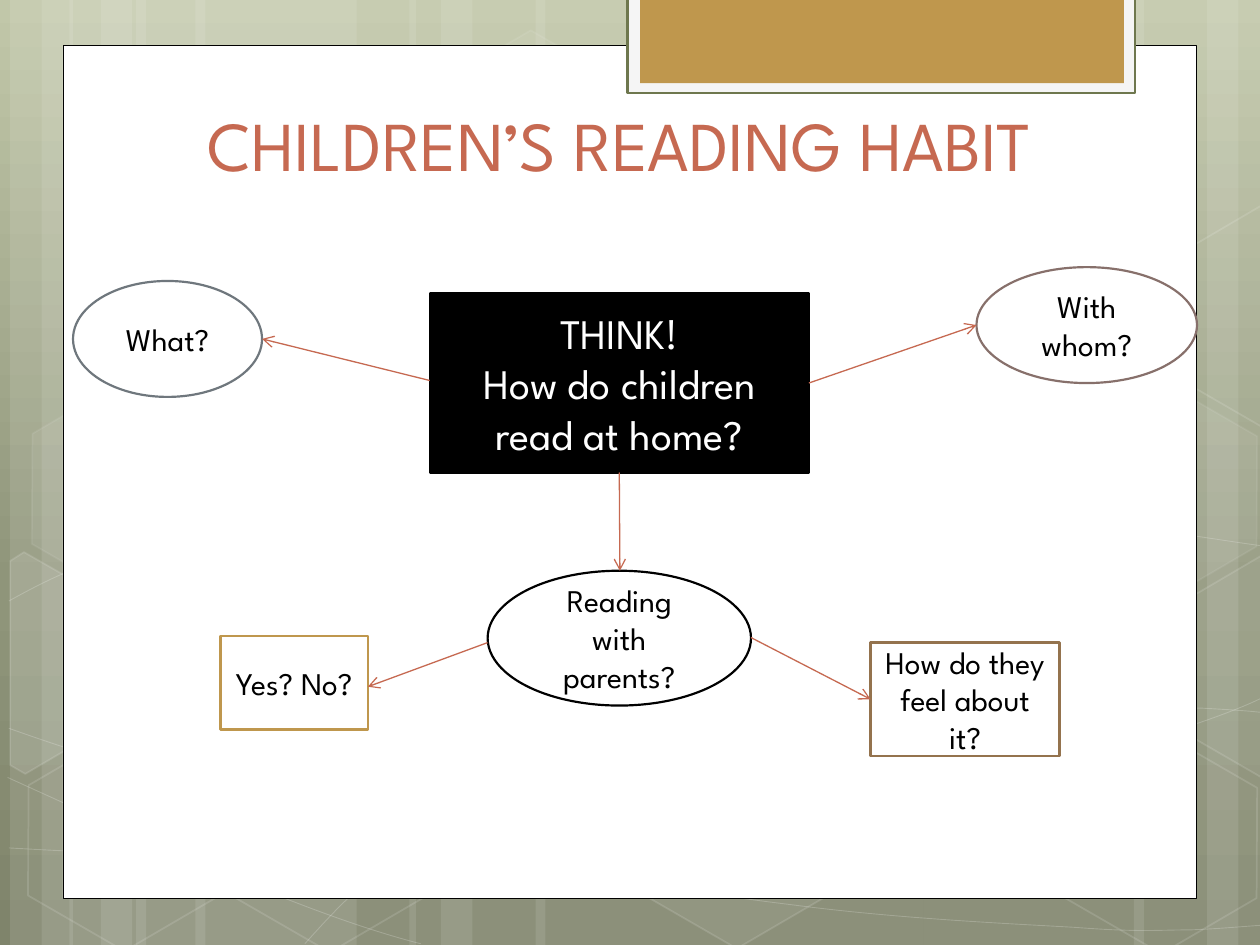
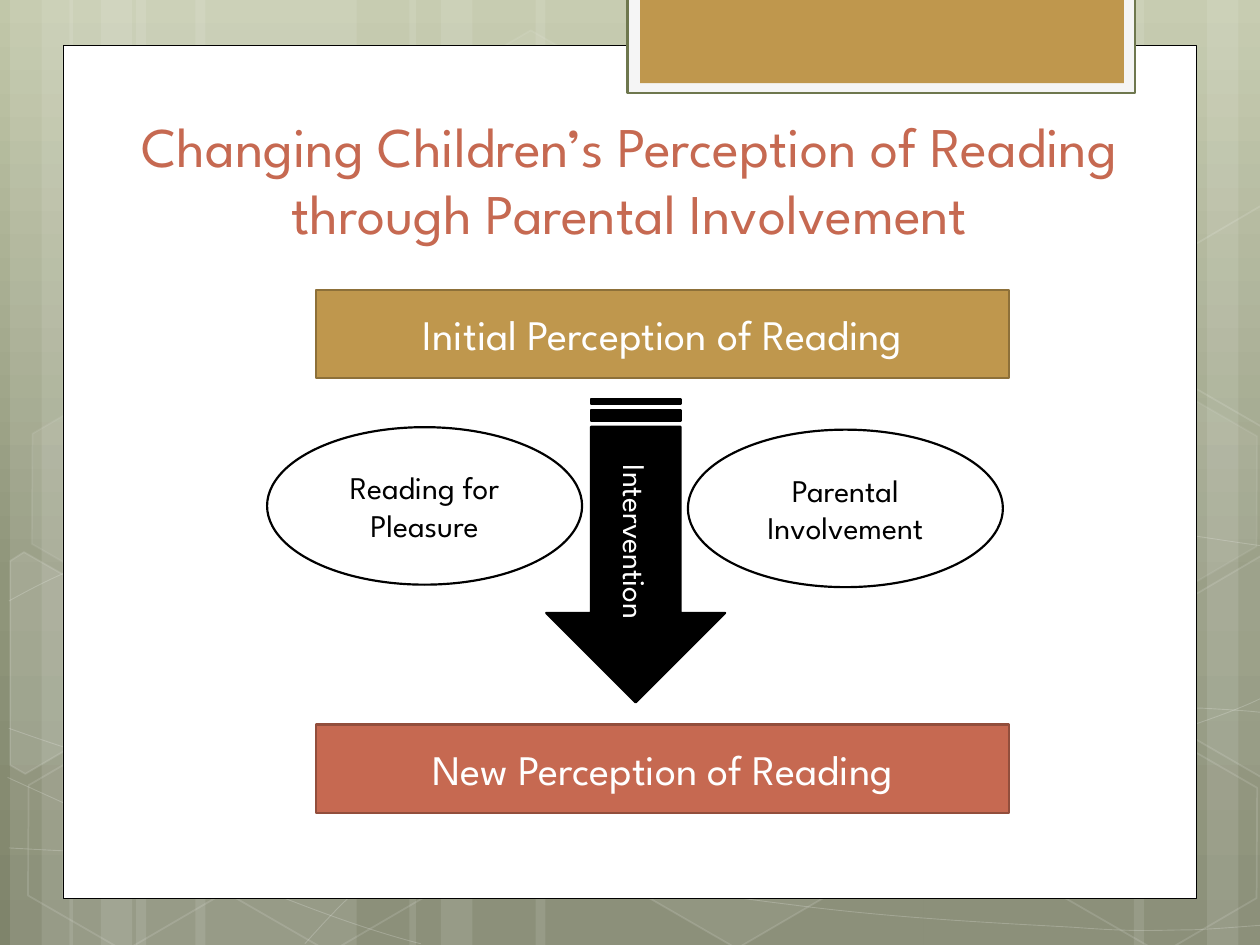
from copy import deepcopy
from math import cos, radians, sin

from lxml import etree
from pptx import Presentation
from pptx.dml.color import RGBColor
from pptx.enum.shapes import MSO_CONNECTOR, MSO_SHAPE
from pptx.enum.text import MSO_ANCHOR, PP_ALIGN
from pptx.oxml.ns import qn
from pptx.util import Inches, Pt

RECT, OVAL, HEXAGON = MSO_SHAPE.RECTANGLE, MSO_SHAPE.OVAL, MSO_SHAPE.HEXAGON
STRIPED_ARROW = MSO_SHAPE.STRIPED_RIGHT_ARROW
STRAIGHT, CENTER, BOTTOM = MSO_CONNECTOR.STRAIGHT, PP_ALIGN.CENTER, MSO_ANCHOR.BOTTOM
LEFT_SIDE, BOTTOM_SIDE, RIGHT_SIDE = 1, 2, 3

WIDTH, HEIGHT = 10, 7.5
FONT = "League Spartan"
WHITE, BLACK, RED, GOLD = "FFFFFF", "000000", "C66951", "BF974D"
BACKGROUND = [(0, "C1C7A9"), (0.62, "8F957A"), (1, "7F846B")]
TILT = 30  # degrees, for every hexagon

# Backdrop: left edge and width of each pale stripe
STRIPES = [(1.08, 1.75), (0.08, 0.5), (0.33, 0.83), (1.55, 1.75), (0.55, 0.5), (0.8, 0.83),
           (7.33, 1.75), (9.58, 0.5), (9, 0.83), (4.25, 3.08), (3.25, 0.5), (3.5, 0.83)]
# Each curve: a start, then two control points and an end per Bezier segment
CURVES = [
    [(0.07, 6.73), (0.61, 6.76), (1.15, 6.79), (1.9, 6.78), (2.65, 6.77), (3.58, 6.75),
     (4.58, 6.65), (5.58, 6.55), (7, 6.36), (7.92, 6.17), (8.83, 5.98), (9.77, 5.68),
     (10.07, 5.51)],
    [(0.07, 4.77), (0.36, 4.61), (0.65, 4.46), (1.21, 4.31), (1.78, 4.16), (2.59, 3.94),
     (3.47, 3.87), (4.36, 3.8), (5.44, 3.79), (6.54, 3.87), (7.64, 3.95), (9.47, 4.26),
     (10.07, 4.34)],
    [(0.06, 6.17), (1.27, 6.72), (2.47, 7.27), (3.34, 7.49)],
    [(0.07, 5.78), (0.38, 5.89), (0.7, 6), (1.28, 6.16), (1.86, 6.31), (2.73, 6.56),
     (3.57, 6.73), (4.4, 6.9), (5.45, 7.08), (6.28, 7.18), (7.11, 7.29), (8, 7.33),
     (8.53, 7.36), (9.05, 7.4), (9.19, 7.38), (9.45, 7.38), (9.71, 7.37), (9.89, 7.35),
     (10.07, 7.34)],
    [(2.42, 7.49), (2.6, 7.29), (2.78, 7.09), (3.02, 6.91), (3.26, 6.73), (3.6, 6.53),
     (3.88, 6.39), (4.16, 6.25), (4.33, 6.19), (4.7, 6.09), (5.06, 5.99), (5.73, 5.85),
     (6.08, 5.78), (6.44, 5.71), (6.49, 5.71), (6.8, 5.69), (7.11, 5.66), (7.6, 5.63),
     (7.94, 5.62), (8.29, 5.61), (8.86, 5.62), (8.86, 5.62), (8.86, 5.62), (9.53, 5.62),
     (9.53, 5.62), (9.71, 5.63), (9.88, 5.64), (9.97, 5.65), (10.06, 5.66), (10.03, 5.65),
     (10.06, 5.66)],
]
# Left, top, fill opacity and line opacity in percent
HEXAGONS = [(3.34, 0.36, 4, 8), (4.97, 5.89, 6, 12), (0.11, 5.91, 0, 12), (0.14, 3.12, 7, 8),
            (1.74, 5.92, 0, 12), (7.53, 4.53, 10, 12), (8.34, 5.93, 0, 12), (8.34, 3.14, 7, 8)]
# Hexagons cut by the slide's edge: centre, corners as they show, fill opacity
CUT_HEXAGONS = [
    ((0.36, 5.35), [(0.08, 4.45), (0.19, 4.38), (0.96, 4.82), (0.95, 5.7), (0.2, 6.14),
                    (0.08, 6.07)], 10),
    ((9.85, 5.2), [(9.26, 4.85), (10.01, 4.41), (10.09, 4.46), (10.09, 6.13), (10.02, 6.17),
                   (9.26, 5.73)], 4),
    ((9.85, 2.41), [(9.26, 2.07), (10.01, 1.63), (10.1, 1.68), (10.09, 3.35), (10.02, 3.39),
                    (9.26, 2.95)], 0),
]
# Card and tab: box, fill, line, line width
FRAME = [((0.5, 0.36, 9, 6.77), WHITE, BLACK, 0.5),
         ((4.98, -0.02, 4.03, 0.76), "F5F5F5", "6E774E", 1.25),
         ((5.08, -0.02, 3.84, 0.68), GOLD, None, 0)]

# Nodes: kind, box, fill, line, paragraphs, size, text colour, rotation
# Arrows: start, end, then the node and side that each end is joined to
HABIT = {
    "title": ("CHILDREN’S READING HABIT", (1.08, 0.75, 7.67, 0.77), 40),
    "nodes": {
        "think": (RECT, (3.41, 2.33, 3.01, 1.42), BLACK, BLACK,
                  ["THINK!", "How do children read at home?"], 24, WHITE, 0),
        "what": (OVAL, (0.58, 2.23, 1.5, 0.92), WHITE, "6F777D", ["What?"], 18, BLACK, 0),
        "whom": (OVAL, (7.75, 2.12, 1.75, 0.92), WHITE, "87706B", ["With whom?"], 18, BLACK, 0),
        "parents": (OVAL, (3.87, 4.53, 2.09, 1.07), WHITE, BLACK,
                    ["Reading with parents?"], 18, BLACK, 0),
        "yes_no": (RECT, (1.75, 5.05, 1.17, 0.74), WHITE, GOLD, ["Yes? No?"], 18, BLACK, 0),
        "feel": (RECT, (6.91, 5.1, 1.5, 0.9), WHITE, "94734E",
                 ["How do they feel about it?"], 18, BLACK, 0),
    },
    "arrows": [((3.41, 3.02), (2.08, 2.69), None, None),
               ((6.42, 3.04), (7.75, 2.58), ("think", RIGHT_SIDE), None),
               ((4.92, 3.75), (4.92, 4.53), ("think", BOTTOM_SIDE), None),
               ((3.87, 5.1), (2.92, 5.45), None, None),
               ((5.96, 5.06), (6.91, 5.55), None, ("feel", LEFT_SIDE))],
}
PERCEPTION = {
    "title": ("Changing Children’s Perception of Reading through Parental Involvement",
              (0.5, 0.75, 9, 1.25), 32),
    "nodes": {
        "initial": (RECT, (2.51, 2.3, 5.5, 0.7), GOLD, "8D7039",
                    ["Initial Perception of Reading"], 24, WHITE, 0),
        "intervention": (STRIPED_ARROW, (3.84, 3.66, 2.41, 1.42), BLACK, BLACK,
                         ["Intervention"], 18, WHITE, 90),
        "involvement": (OVAL, (5.46, 3.41, 2.5, 1.25), WHITE, BLACK,
                        ["Parental Involvement"], 18, BLACK, 0),
        "pleasure": (OVAL, (2.12, 3.39, 2.5, 1.25), WHITE, BLACK,
                     ["Reading for Pleasure"], 18, BLACK, 0),
        "new": (RECT, (2.51, 5.75, 5.5, 0.7), RED, "924E3C",
                ["New Perception of Reading"], 24, WHITE, 0),
    },
    "arrows": [],
}


def rgb(color):
    return RGBColor.from_string(color)


def style(sp, fill=None, line=None, width=1.0, fill_alpha=100, line_alpha=100):
    """Set fill and line, each with an opacity in percent, and no shadow."""
    sp.shadow.inherit = False
    for target, color in ((sp.fill, fill), (sp.line.fill, line)):
        if color:
            target.solid()
            target.fore_color.rgb = rgb(color)
        else:
            target.background()
    if line:
        sp.line.width = Pt(width)
    for holder, alpha in (("a:solidFill", fill_alpha), ("a:ln/a:solidFill", line_alpha)):
        if alpha < 100:
            for clr in sp._element.spPr.xpath(holder + "/a:srgbClr"):
                etree.SubElement(clr, qn("a:alpha"), val=str(alpha * 1000))


def add_box(s, kind, box):
    return s.shapes.add_shape(kind, *map(Inches, box))


def add_outline(s, points, close):
    first, *rest = [(Inches(x), Inches(y)) for x, y in points]
    builder = s.shapes.build_freeform(*first, scale=1.0)
    builder.add_line_segments(rest, close=close)
    return builder.convert_to_shape()


def add_curve(s, points):
    """Draw a chain of Bezier segments: every three line ends become one segment."""
    sp = add_outline(s, points, False)
    ends = sp._element.spPr.xpath(".//a:lnTo")
    for i in range(0, len(ends), 3):
        segment = etree.Element(qn("a:cubicBezTo"))
        ends[i].addprevious(segment)
        for end in ends[i:i + 3]:
            segment.append(end[0])
            end.getparent().remove(end)
    return sp


def turn_back(points, center):
    """Undo the tilt around the centre."""
    c, d = cos(radians(TILT)), sin(radians(TILT))
    cx, cy = center
    return [(cx + (x - cx) * c + (y - cy) * d, cy - (x - cx) * d + (y - cy) * c)
            for x, y in points]


def write(sp, paragraphs, size, color):
    tf = sp.text_frame
    tf.word_wrap = True
    for i, text in enumerate(paragraphs):
        p = tf.add_paragraph() if i else tf.paragraphs[0]
        p.alignment = CENTER
        r = p.add_run()
        r.text = text
        r.font.name, r.font.size = FONT, Pt(size)
        r.font.color.rgb = rgb(color)


def set_background(s):
    fill = s.background.fill
    fill.gradient()
    fill.gradient_angle = 270
    stops = s.background._cSld.xpath(".//a:gsLst")[0]
    stops.append(deepcopy(stops[-1]))
    for stop, (position, color) in zip(fill.gradient_stops, BACKGROUND):
        stop.position = position
        stop.color.rgb = rgb(color)


def add_backdrop(s):
    for left, width in STRIPES:
        style(add_box(s, RECT, (left, 0, width, HEIGHT)), WHITE, fill_alpha=10)
    for curve in CURVES:
        style(add_curve(s, curve), None, WHITE, 0.5, line_alpha=20)
    for left, top, fill_alpha, line_alpha in HEXAGONS:
        sp = add_box(s, HEXAGON, (left, top, 1.75, 1.52))
        sp.adjustments[0] = 0.285
        sp.rotation = TILT
        style(sp, WHITE if fill_alpha else None, WHITE, 1, fill_alpha, line_alpha)
    for center, corners, fill_alpha in CUT_HEXAGONS:
        sp = add_outline(s, turn_back(corners, center), True)
        sp.rotation = TILT
        style(sp, WHITE if fill_alpha else None, WHITE, 1, fill_alpha, 12)
    for box, fill, line, width in FRAME:
        style(add_box(s, RECT, box), fill, line, width)


def add_arrow(s, nodes, start, end, begin_joint, end_joint):
    cx = s.shapes.add_connector(STRAIGHT, *map(Inches, start + end))
    for joint, connect in ((begin_joint, cx.begin_connect), (end_joint, cx.end_connect)):
        if joint:
            name, side = joint
            connect(nodes[name], side)
    cx.line.color.rgb = rgb(RED)
    cx.line.width = Pt(0.75)
    spPr = cx._element.spPr
    etree.SubElement(spPr.find(qn("a:ln")), qn("a:tailEnd"), type="arrow")
    etree.SubElement(spPr, qn("a:effectLst"))


def build_slide(prs, content):
    s = prs.slides.add_slide(prs.slide_layouts[6])
    set_background(s)
    add_backdrop(s)
    title, box, size = content["title"]
    tb = s.shapes.add_textbox(*map(Inches, box))
    tb.text_frame.vertical_anchor = BOTTOM
    write(tb, [title], size, RED)
    nodes = {}
    for name, (kind, box, fill, line, text, size, color, turn) in content["nodes"].items():
        sp = nodes[name] = add_box(s, kind, box)
        sp.rotation = turn
        style(sp, fill, line, 1.25)
        write(sp, text, size, color)
    for arrow in content["arrows"]:
        add_arrow(s, nodes, *arrow)


def main():
    prs = Presentation()
    prs.slide_width, prs.slide_height = Inches(WIDTH), Inches(HEIGHT)
    for content in (HABIT, PERCEPTION):
        build_slide(prs, content)
    prs.save("out.pptx")


if __name__ == "__main__":
    main()
